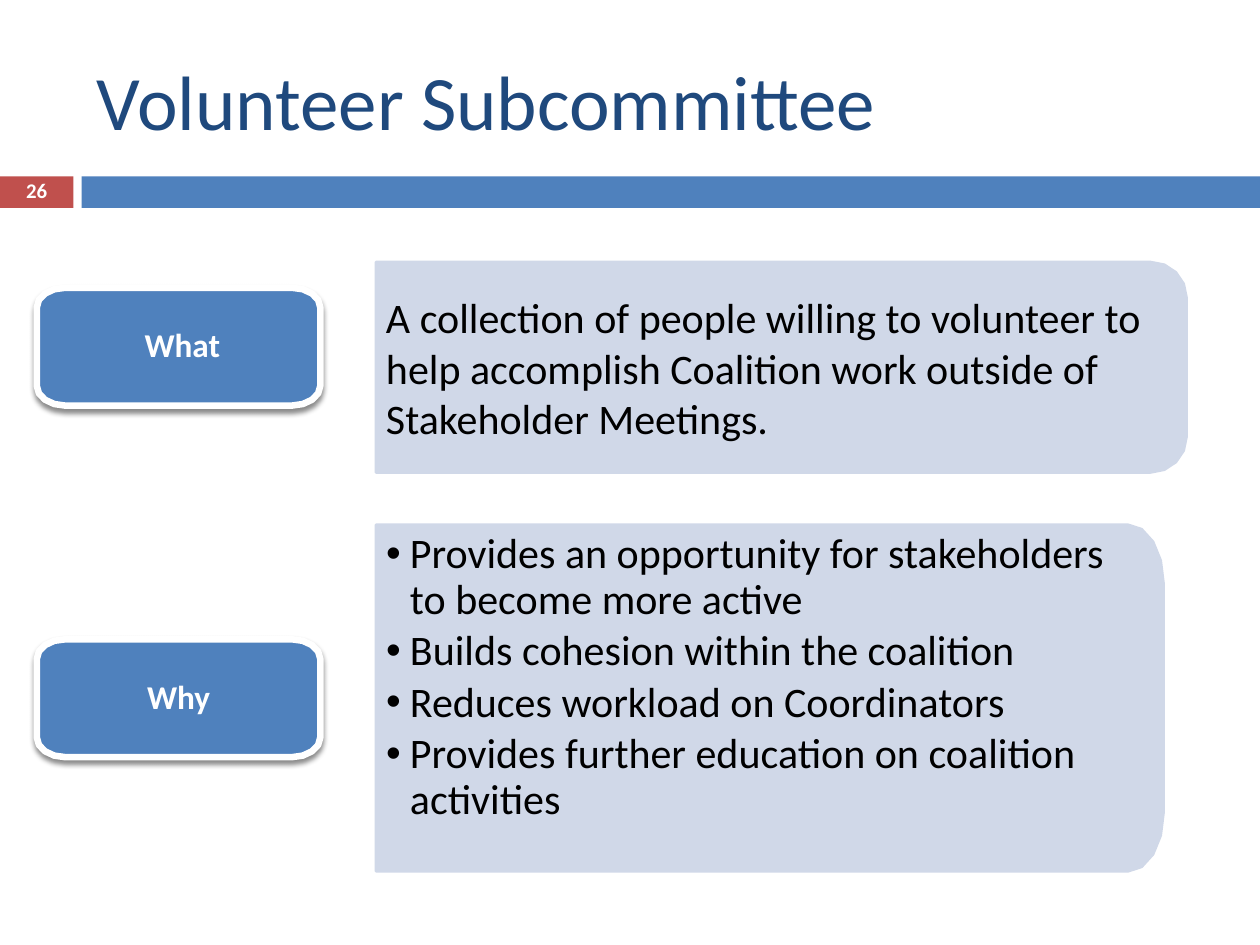
import math
from dataclasses import dataclass

from lxml import etree
from pptx import Presentation, util as u
from pptx.dml.color import RGBColor
from pptx.enum import shapes as shp, text as txt
from pptx.oxml.ns import qn


@dataclass(frozen=True)
class Theme:
    font: str = "Calibri"
    title: str = "1F497D"
    blue: str = "4F81BD"
    red: str = "C0504D"
    pale: str = "D0D8E8"
    white: str = "FFFFFF"
    black: str = "000000"
    title_size: float = 44
    body_size: float = 24
    label_size: float = 19
    number_size: float = 11.9


THEME = Theme()
COLUMNS, ROWS = 100, 75
CORNER_STEPS = 4
SLIDE_WIDTH, SLIDE_HEIGHT = u.Inches(10), u.Inches(7.5)
COLUMN, ROW = SLIDE_WIDTH / COLUMNS, SLIDE_HEIGHT / ROWS

PURPOSE = "A collection of people willing to volunteer to help accomplish Coalition work outside of Stakeholder Meetings."
REASONS = [
    "Provides an opportunity for stakeholders to become more active",
    "Builds cohesion within the coalition",
    "Reduces workload on Coordinators",
    "Provides further education on coalition activities",
]


def grid(box):
    left, top, width, height = box
    return [u.Emu(round(n)) for n in (left * COLUMN, top * ROW, width * COLUMN, height * ROW)]


def apply(target, formats):
    for name, value in formats.items():
        setattr(target, name, value)


def add_child(parent, tag, **attributes):
    return etree.SubElement(parent, qn(tag), attributes)


def write(frame, lines, size, color, insets=(0.1, 0.05, 0.1, 0.05), bold=False, **paragraph_formats):
    left, top, right, bottom = map(u.Inches, insets)
    apply(frame, dict(word_wrap=True, vertical_anchor=txt.MSO_ANCHOR.MIDDLE,
                      margin_left=left, margin_top=top, margin_right=right, margin_bottom=bottom))
    for index, line in enumerate(lines):
        paragraph = frame.paragraphs[0] if index == 0 else frame.add_paragraph()
        apply(paragraph, dict(alignment=txt.PP_ALIGN.LEFT) | paragraph_formats)
        run = paragraph.add_run()
        run.text = line
        apply(run.font, dict(name=THEME.font, size=u.Pt(size), bold=bold))
        run.font.color.rgb = RGBColor.from_string(color)


def paint(shape, fill, line=None, width=0):
    shape.shadow.inherit = False
    shape.fill.solid()
    shape.fill.fore_color.rgb = RGBColor.from_string(fill)
    if line:
        shape.line.color.rgb = RGBColor.from_string(line)
        shape.line.width = u.Pt(width)
    else:
        shape.line.fill.background()


def rounded_outline(slide, box, radius_x, radius_y, round_left):
    left, top, width, height = grid(box)
    rx, ry = radius_x * COLUMN, radius_y * ROW
    right, bottom = left + width, top + height

    def corner(x, y, start):
        angles = [math.radians(start + 90 * step / CORNER_STEPS) for step in range(CORNER_STEPS + 1)]
        return [(round(x + rx * math.cos(a)), round(y + ry * math.sin(a))) for a in angles]

    points = corner(right - rx, top + ry, -90) + corner(right - rx, bottom - ry, 0)
    if round_left:
        points += corner(left + rx, bottom - ry, 90) + corner(left + rx, top + ry, 180)
    else:
        points += [(left, bottom), (left, top)]
    builder = slide.shapes.build_freeform(*points[0])
    builder.add_line_segments(points[1:], close=True)
    return builder.convert_to_shape()


def add_heading(slide, box, heading):
    title = slide.shapes.title
    apply(title, dict(zip(("left", "top", "width", "height"), grid(box))))
    write(title.text_frame, [heading], THEME.title_size, THEME.title)


def add_band(slide, box, number):
    left, top, width, height = box
    number_width, gap = 5.83, 0.65
    bar_left = number_width + gap
    number_box = (left, top, number_width, height)
    bar_box = (left + bar_left, top, width - bar_left, height)
    for part, color in ((number_box, THEME.red), (bar_box, THEME.blue)):
        bar = slide.shapes.add_shape(shp.MSO_SHAPE.RECTANGLE, *grid(part))
        paint(bar, color)
    page = slide.shapes.add_textbox(*grid(number_box))
    write(page.text_frame, [number], THEME.number_size, THEME.white, bold=True,
          alignment=txt.PP_ALIGN.CENTER, line_spacing=0.8)


def add_panel(slide, box, radius_x, radius_y, lines, bottom_inset=0.1, bulleted=False):
    panel = rounded_outline(slide, box, radius_x, radius_y, round_left=False)
    paint(panel, THEME.pale, THEME.pale, 1.5)
    spacing = dict(line_spacing=0.9, space_after=u.Pt(3.6)) if bulleted else {}
    write(panel.text_frame, lines, THEME.body_size, THEME.black,
          (0.08, 0.1, 0.14, bottom_inset), **spacing)
    if bulleted:
        indent = u.Inches(0.19)
        for paragraph in panel.text_frame.paragraphs:
            properties = paragraph._p.get_or_add_pPr()
            properties.set("marL", str(indent))
            properties.set("indent", str(-indent))
            add_child(properties, "a:buFont", typeface="Arial")
            add_child(properties, "a:buChar", char="•")


def add_label(slide, box, label):
    button = rounded_outline(slide, box, 2.25, 1.56, round_left=True)
    paint(button, THEME.blue, THEME.white, 3.75)
    effects = button.element.spPr.find(qn("a:effectLst"))
    shadow = add_child(effects, "a:outerShdw", blurRad=str(u.Pt(3)), dist=str(u.Pt(2.4)),
                       dir="5400000", rotWithShape="0")
    add_child(add_child(shadow, "a:srgbClr", val=THEME.black), "a:alpha", val="45000")
    write(button.text_frame, [label], THEME.label_size, THEME.white,
          (0.15, 0.11, 0.15, 0.11), bold=True, alignment=txt.PP_ALIGN.CENTER, line_spacing=0.9)


def main():
    deck = Presentation()
    apply(deck, dict(slide_width=SLIDE_WIDTH, slide_height=SLIDE_HEIGHT))
    slide = deck.slides.add_slide(deck.slide_layouts[5])
    add_band(slide, (0, 14, COLUMNS, 2.5), "26")
    add_heading(slide, (6.67, 2.5, 89.2, 10.8), "Volunteer Subcommittee")
    add_panel(slide, (29.84, 41.65, 62.5, 27.5), 2.8, 4.6, REASONS, bottom_inset=0.42, bulleted=True)
    add_panel(slide, (29.84, 20.8, 64.33, 16.7), 2.85, 2.8, [PURPOSE])
    for label, top in (("Why", 50.74), (" What", 22.84)):
        add_label(slide, (2.92, top, 22.5, 9.35), label)
    deck.save("out.pptx")


if __name__ == "__main__":
    main()
